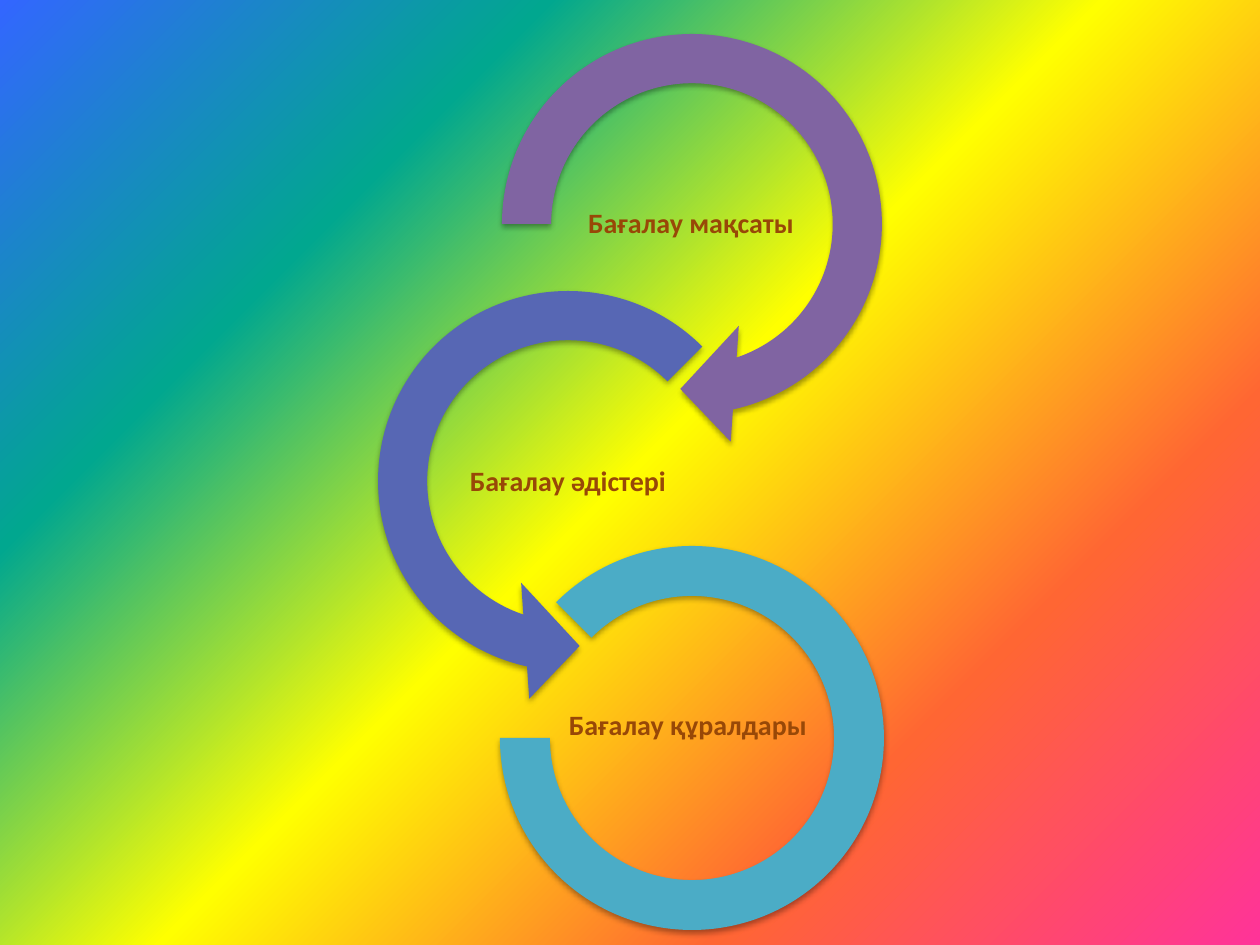
import dataclasses

import pptx
import pptx.dml.color
import pptx.enum.shapes
import pptx.enum.text
import pptx.oxml
import pptx.oxml.ns
import pptx.util

SHAPE = pptx.enum.shapes.MSO_SHAPE
RGB = pptx.dml.color.RGBColor.from_string
NS = pptx.oxml.ns.nsdecls("a")


@dataclasses.dataclass(frozen=True)
class Theme:
    rainbow: tuple = ("FF3399", "FF6633", "FFFF00", "01A78F", "3366FF")
    purple: str = "8064A2"
    indigo: str = "5767B4"
    teal: str = "4BACC6"
    label: str = "984807"
    font: str = "Calibri"
    size: int = 16


THEME = Theme()
WIDTH, HEIGHT = 1260, 945

# Ring sizes and the vertical distance from ring to ring
ARROW_SIZE, ARC_SIZE = 447, 384
FIRST_Y, STEP_Y = 224, 257
LABEL_HEIGHT = 125

# Preset, adjustments, size, centre x, colour; then label text, centre, width
STEPS = [
    (SHAPE.CIRCULAR_ARROW, (0.11, 11.42, 45, 108, 0.13), ARROW_SIZE, 692,
     THEME.purple, "Бағалау мақсаты", (691, 224), 248),
    (SHAPE.LEFT_CIRCULAR_ARROW, (0.11, 11.42, 63, 189, 0.13), ARROW_SIZE, 568,
     THEME.indigo, "Бағалау әдістері", (568, 482), 248),
    (SHAPE.BLOCK_ARC, (135, 108, 0.13), ARC_SIZE, 692,
     THEME.teal, "Бағалау құралдары", (688, 726), 326),
]


def px(n):
    return pptx.util.Emu(round(n * 914400 / 126))


def centred_box(x, y, w, h):
    return px(x - w / 2), px(y - h / 2), px(w), px(h)


def paint_background(s, colors):
    """Fill the slide with evenly spaced stops spreading from the lower right."""
    s.background.fill.gradient()
    grad = s.element.find(".//" + pptx.oxml.ns.qn("a:gradFill"))
    for child in list(grad):
        grad.remove(child)
    stops = "".join(
        f'<a:gs pos="{i * 100000 // (len(colors) - 1)}"><a:srgbClr val="{c}"/></a:gs>'
        for i, c in enumerate(colors))
    grad.append(pptx.oxml.parse_xml(f"<a:gsLst {NS}>{stops}</a:gsLst>"))
    grad.append(pptx.oxml.parse_xml(
        f'<a:path {NS} path="circle"><a:fillToRect l="100000" t="100000"/></a:path>'))


def add_shadow(sp):
    sp.shadow.inherit = False
    effects = sp.element.spPr.find(pptx.oxml.ns.qn("a:effectLst"))
    effects.append(pptx.oxml.parse_xml(
        f'<a:outerShdw {NS} blurRad="40000" dist="23000" dir="5400000" rotWithShape="0">'
        '<a:srgbClr val="000000"><a:alpha val="35000"/></a:srgbClr></a:outerShdw>'))


def add_ring(shapes, preset, adjustments, x, y, size, color):
    sp = shapes.add_shape(preset, *centred_box(x, y, size, size))
    for i, value in enumerate(adjustments):
        sp.adjustments[i] = value
    sp.fill.solid()
    sp.fill.fore_color.rgb = RGB(color)
    sp.line.fill.background()
    add_shadow(sp)


def add_label(shapes, text, centre, width):
    tf = shapes.add_textbox(*centred_box(*centre, width, LABEL_HEIGHT)).text_frame
    frame_format = {"word_wrap": True,
                    "vertical_anchor": pptx.enum.text.MSO_ANCHOR.MIDDLE}
    frame_format.update((f"margin_{side}", px(1))
                        for side in ("left", "top", "right", "bottom"))
    for name, value in frame_format.items():
        setattr(tf, name, value)
    p = tf.paragraphs[0]
    p.alignment = pptx.enum.text.PP_ALIGN.CENTER
    p.line_spacing = 0.9
    r = p.add_run()
    r.text = text
    font_format = {"name": THEME.font, "size": pptx.util.Pt(THEME.size), "bold": True}
    for name, value in font_format.items():
        setattr(r.font, name, value)
    r.font.color.rgb = RGB(THEME.label)


def main():
    prs = pptx.Presentation()
    prs.slide_width, prs.slide_height = px(WIDTH), px(HEIGHT)
    s = prs.slides.add_slide(prs.slide_layouts[6])
    paint_background(s, THEME.rainbow)

    # Chain of rings, each with its label
    chain = s.shapes.add_group_shape().shapes
    for i, (preset, adjustments, size, x, color, text, centre, width) in enumerate(STEPS):
        add_ring(chain, preset, adjustments, x, FIRST_Y + i * STEP_Y, size, color)
        add_label(chain, text, centre, width)

    prs.save("out.pptx")


if __name__ == "__main__":
    main()
